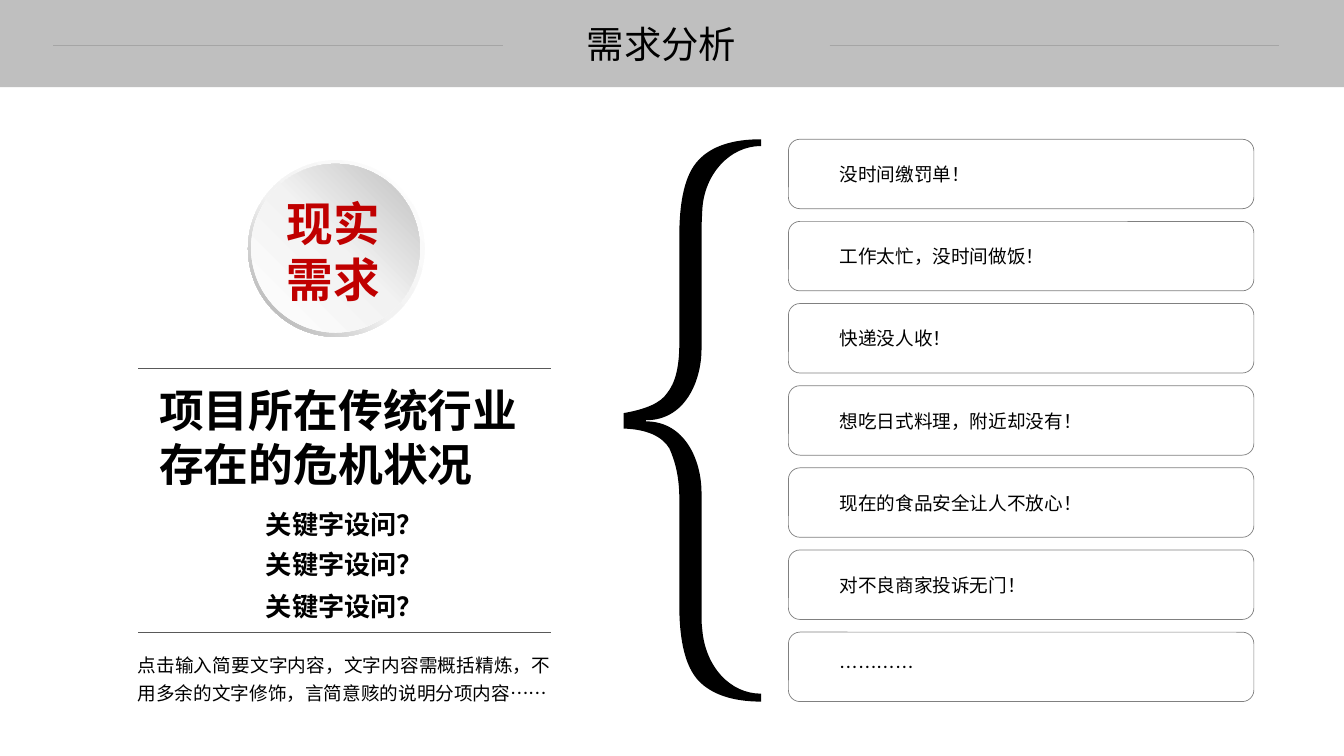
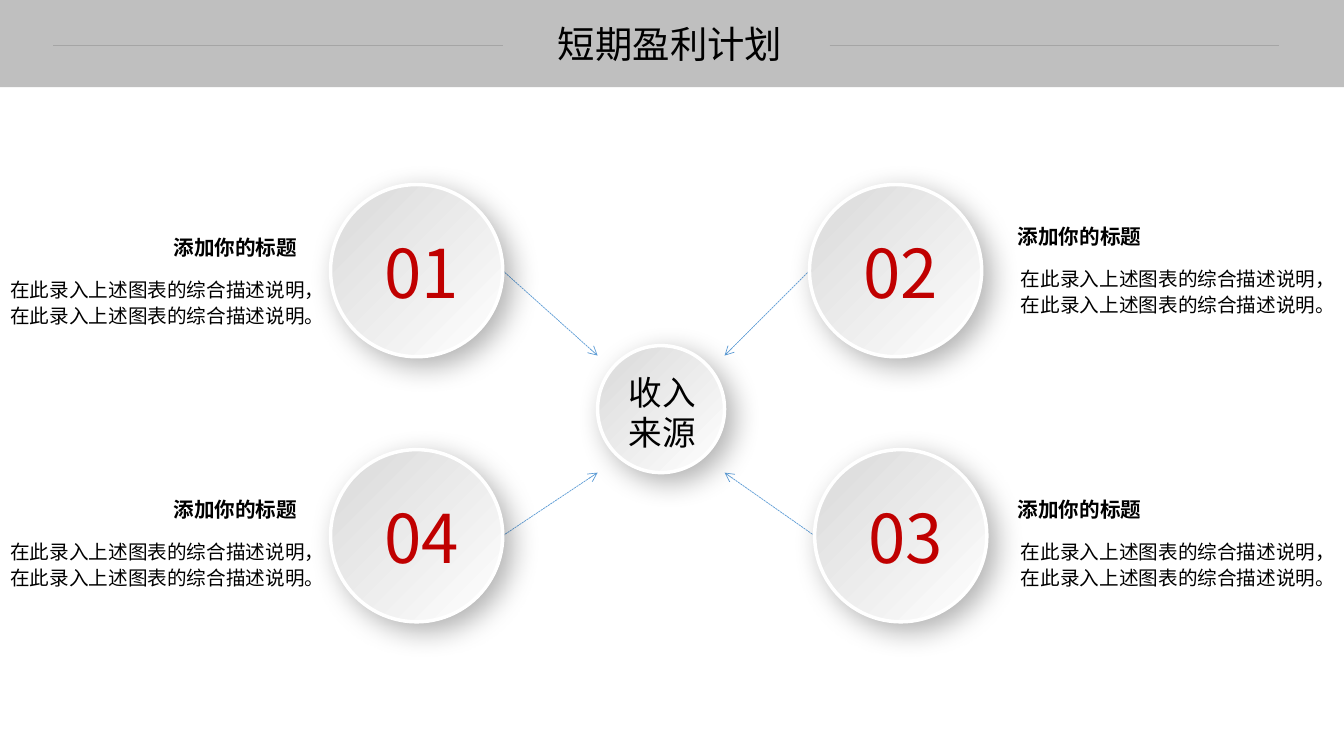
import pptx
import pptx.dml.color
import pptx.enum.dml
import pptx.enum.shapes
import pptx.enum.text
import pptx.oxml
import pptx.oxml.ns
import pptx.util
from lxml import etree

Cm, Pt = pptx.util.Cm, pptx.util.Pt
SHAPE = pptx.enum.shapes.MSO_SHAPE
ALIGN = pptx.enum.text.PP_ALIGN
qn = pptx.oxml.ns.qn

SLIDE_W, SLIDE_H = 33.87, 19.05
FONT = "Noto Sans CJK SC"
BLACK, WHITE, RED, BAND = "000000", "FFFFFF", "C00000", "BFBFBF"
RULE, HEADER_RULE, BOX_LINE, ARROW = "595959", "A5A5A5", "808080", "5B9BD5"

# Each step holds one point for a line or three for a Bézier curve (cm).
BRACE_START = (19.18, 3.51)
BRACE_STEPS = [
    [(19.18, 3.68)],
    [(18.39, 3.68), (17.75, 4.39), (17.7, 5.28)],
    [(17.68, 5.72)],
    [(17.68, 8.79)],
    [(17.68, 9.6), (17.27, 10.59), (16.28, 10.59)],
    [(16.28, 10.62)],
    [(17.25, 10.62), (17.68, 11.58), (17.68, 12.42)],
    [(17.68, 15.67)],
    [(17.7, 15.88)],
    [(17.78, 16.79), (18.39, 17.48), (19.18, 17.48)],
    [(19.18, 17.68)],
    [(18.47, 17.68), (17.93, 17.5), (17.6, 17.15)],
    [(17.27, 16.79), (17.12, 16.15), (17.12, 15.24)],
    [(17.12, 12.55)],
    [(17.12, 12.04), (17.02, 11.63), (16.87, 11.3)],
    [(16.69, 11), (16.31, 10.82), (15.72, 10.8)],
    [(15.72, 10.41)],
    [(16.28, 10.31), (16.64, 10.16), (16.81, 9.91)],
    [(17.02, 9.65), (17.12, 9.25), (17.12, 8.66)],
    [(17.12, 5.97)],
    [(17.12, 5.03), (17.27, 4.39), (17.6, 4.04)],
    [(17.93, 3.68), (18.47, 3.51), (19.18, 3.51)],
]


def rgb(value):
    return pptx.dml.color.RGBColor.from_string(value)


def write(tf, text, size=13.3, color=BLACK, bold=False, align=ALIGN.LEFT,
          spacing=None):
    """Fill a text frame, one paragraph per line of text."""
    for i, line in enumerate(text.split("\n")):
        p = tf.add_paragraph() if i else tf.paragraphs[0]
        p.alignment = align
        if spacing:
            p.line_spacing = spacing
        r = p.add_run()
        r.text = line
        r.font.size, r.font.bold, r.font.name = Pt(size), bold, FONT
        r.font.color.rgb = rgb(color)
        etree.SubElement(r.font._element, qn("a:ea"), typeface=FONT)


class Deck:
    def __init__(self):
        self.prs = pptx.Presentation()
        self.prs.slide_width, self.prs.slide_height = Cm(SLIDE_W), Cm(SLIDE_H)
        self.s = None

    def slide(self, title, title_w):
        """Start a slide with its band, title and two rules."""
        self.s = self.prs.slides.add_slide(self.prs.slide_layouts[6])
        self.shape(SHAPE.RECTANGLE, 0, 0, SLIDE_W, 2.2, fill=BAND)
        self.text(13.74, 0.41, title_w, 1.4, title, size=26.7,
                  align=ALIGN.CENTER)
        for x in (1.34, 20.91):
            self.line(x, 1.14, x + 11.33, 1.14, HEADER_RULE, 0.75)

    def paint(self, sp, fill, line=None, width=0.5):
        sp.shadow.inherit = False
        sp.fill.solid()
        sp.fill.fore_color.rgb = rgb(fill)
        if line:
            sp.line.color.rgb = rgb(line)
            sp.line.width = Pt(width)
        else:
            sp.line.fill.background()

    def shape(self, kind, x, y, w, h, fill=WHITE, line=None, width=0.5):
        sp = self.s.shapes.add_shape(kind, Cm(x), Cm(y), Cm(w), Cm(h))
        self.paint(sp, fill, line, width)
        return sp

    def gradient(self, sp, stops, angle):
        """Apply (percent, colour) stops; the angle runs clockwise."""
        sp.fill.gradient()
        sp.fill.gradient_angle = (360 - angle) % 360
        stop_list = sp._element.spPr.find(qn("a:gradFill")).find(qn("a:gsLst"))
        for old in list(stop_list):
            stop_list.remove(old)
        for percent, color in stops:
            gs = etree.SubElement(stop_list, qn("a:gs"), pos=str(percent * 1000))
            etree.SubElement(gs, qn("a:srgbClr"), val=color)

    def button(self, x, y, d):
        """Round grey button with a white rim and a soft shadow."""
        sp = self.shape(SHAPE.OVAL, x, y, d, d, line=WHITE, width=2.5)
        self.gradient(sp, [(0, "D9D9D9"), (100, WHITE)], 45)
        effects = sp._element.spPr.find(qn("a:effectLst"))
        shadow = etree.SubElement(
            effects, qn("a:outerShdw"), blurRad=str(Pt(20)), dist=str(Pt(8)),
            dir=str(45 * 60000), algn="tl", rotWithShape="0")
        color = etree.SubElement(shadow, qn("a:srgbClr"), val=BLACK)
        etree.SubElement(color, qn("a:alpha"), val="30000")

    def outline(self, start, steps, fill):
        """Closed freeform whose three-point steps become Bézier curves."""
        builder = self.s.shapes.build_freeform(*map(Cm, start))
        builder.add_line_segments([tuple(map(Cm, step[-1])) for step in steps])
        sp = builder.convert_to_shape()
        self.paint(sp, fill)
        outline = next(sp._element.iter(qn("a:path")))
        for segment, step in zip(outline.findall(qn("a:lnTo")), steps):
            if len(step) == 3:
                curve = etree.Element(qn("a:cubicBezTo"))
                for x, y in step:
                    etree.SubElement(curve, qn("a:pt"), x=str(Cm(x) - sp.left),
                                     y=str(Cm(y) - sp.top))
                outline.replace(segment, curve)
        etree.SubElement(outline, qn("a:close"))

    def line(self, x1, y1, x2, y2, color, width=0.5, arrow=False):
        c = self.s.shapes.add_connector(
            pptx.enum.shapes.MSO_CONNECTOR.STRAIGHT,
            Cm(x1), Cm(y1), Cm(x2), Cm(y2))
        c.line.color.rgb = rgb(color)
        c.line.width = Pt(width)
        if arrow:
            c.line.dash_style = pptx.enum.dml.MSO_LINE.SQUARE_DOT
            etree.SubElement(c.line._get_or_add_ln(), qn("a:tailEnd"),
                             type="arrow")
        etree.SubElement(c._element.spPr, qn("a:effectLst"))

    def text(self, x, y, w, h, text, inset=True, wrap=True, **style):
        tf = self.s.shapes.add_textbox(Cm(x), Cm(y), Cm(w), Cm(h)).text_frame
        tf.word_wrap = wrap
        tf.auto_size = pptx.enum.text.MSO_AUTO_SIZE.SHAPE_TO_FIT_TEXT
        if not inset:
            tf.margin_left = tf.margin_right = 0
            tf.margin_top = tf.margin_bottom = 0
        write(tf, text, **style)


def needs_slide(deck):
    deck.slide("需求分析", 5.87)
    for y in (9.27, 15.94):
        deck.line(3.48, y, 13.88, y, RULE)
    deck.text(4.01, 9.65, 9.32, 2.74, "项目所在传统行业存在的危机状况",
              inset=False, size=32, bold=True)
    for y in (12.8, 13.82, 14.88):
        deck.text(5.75, y, 5.87, 0.79, "关键字设问？", inset=False,
                  size=18.7, bold=True, align=ALIGN.CENTER)
    deck.text(3.47, 16.33, 10.41, 1.42,
              "点击输入简要文字内容，文字内容需概括精炼，不用多余的文字修饰，"
              "言简意赅的说明分项内容……",
              inset=False, align=ALIGN.JUSTIFY, spacing=Pt(20))

    deck.outline(BRACE_START, BRACE_STEPS, BLACK)
    answers = ["没时间缴罚单！", "工作太忙，没时间做饭！", "快递没人收！",
               "想吃日式料理，附近却没有！", "现在的食品安全让人不放心！",
               "对不良商家投诉无门！", "…………"]
    for i, answer in enumerate(answers):
        y = 3.51 + 2.07 * i
        deck.shape(SHAPE.ROUNDED_RECTANGLE, 19.87, y, 11.73, 1.75,
                   line=BOX_LINE)
        deck.text(21.16, y + 0.6, 8.56, 0.56, answer, inset=False,
                  align=ALIGN.JUSTIFY)

    rim = deck.shape(SHAPE.DONUT, 6.25, 4.04, 4.45, 4.45)
    rim.adjustments[0] = 0.05
    deck.gradient(rim, [(0, WHITE), (55, "F2F2F2"), (100, "A6A6A6")], 135)
    disc = deck.shape(SHAPE.OVAL, 6.33, 4.13, 4.25, 4.25)
    deck.gradient(disc, [(0, WHITE), (51, "F2F2F2"), (100, BAND)], 315)
    deck.text(6.08, 4.9, 4.65, 2.84, "现实\n需求", inset=False, size=33.3,
              color=RED, bold=True, align=ALIGN.CENTER)


def profit_slide(deck):
    deck.slide("短期盈利计划", 6.3)
    d, hub_x, hub_y, hub_d = 4.34, 15.06, 8.71, 3.2
    sources = [("01", 8.33, 4.65, 5.79), ("02", 20.4, 4.65, 5.52),
               ("03", 20.53, 11.33, 12.4), ("04", 8.33, 11.33, 12.4)]
    for number, x, y, heading_y in sources:
        on_left, on_top = x < hub_x, y < hub_y
        deck.line(x + d if on_left else x, y + d / 2,
                  hub_x if on_left else hub_x + hub_d,
                  8.96 if on_top else 11.91, ARROW, arrow=True)
        deck.button(x, y, d)
        deck.text(x + 1.04, y + 1.05, 2.51, 2.31, number, wrap=False,
                  size=48, color=RED, align=ALIGN.CENTER)
        heading_x, body_x = (4.12, 0.01) if on_left else (25.39, 25.48)
        deck.text(heading_x, heading_y, 3.66, 0.89, "添加你的标题",
                  wrap=False, size=14.7, bold=True)
        deck.text(body_x, heading_y + 1.03, 8.48, 1.57,
                  "在此录入上述图表的综合描述说明，\n"
                  "在此录入上述图表的综合描述说明。",
                  wrap=False, size=14, spacing=1.1)
    deck.button(hub_x, hub_y, hub_d)
    deck.text(15.6, 9.25, 2.39, 2.31, "收入来源", size=24)


def main():
    deck = Deck()
    needs_slide(deck)
    profit_slide(deck)
    deck.prs.save("out.pptx")


if __name__ == "__main__":
    main()
